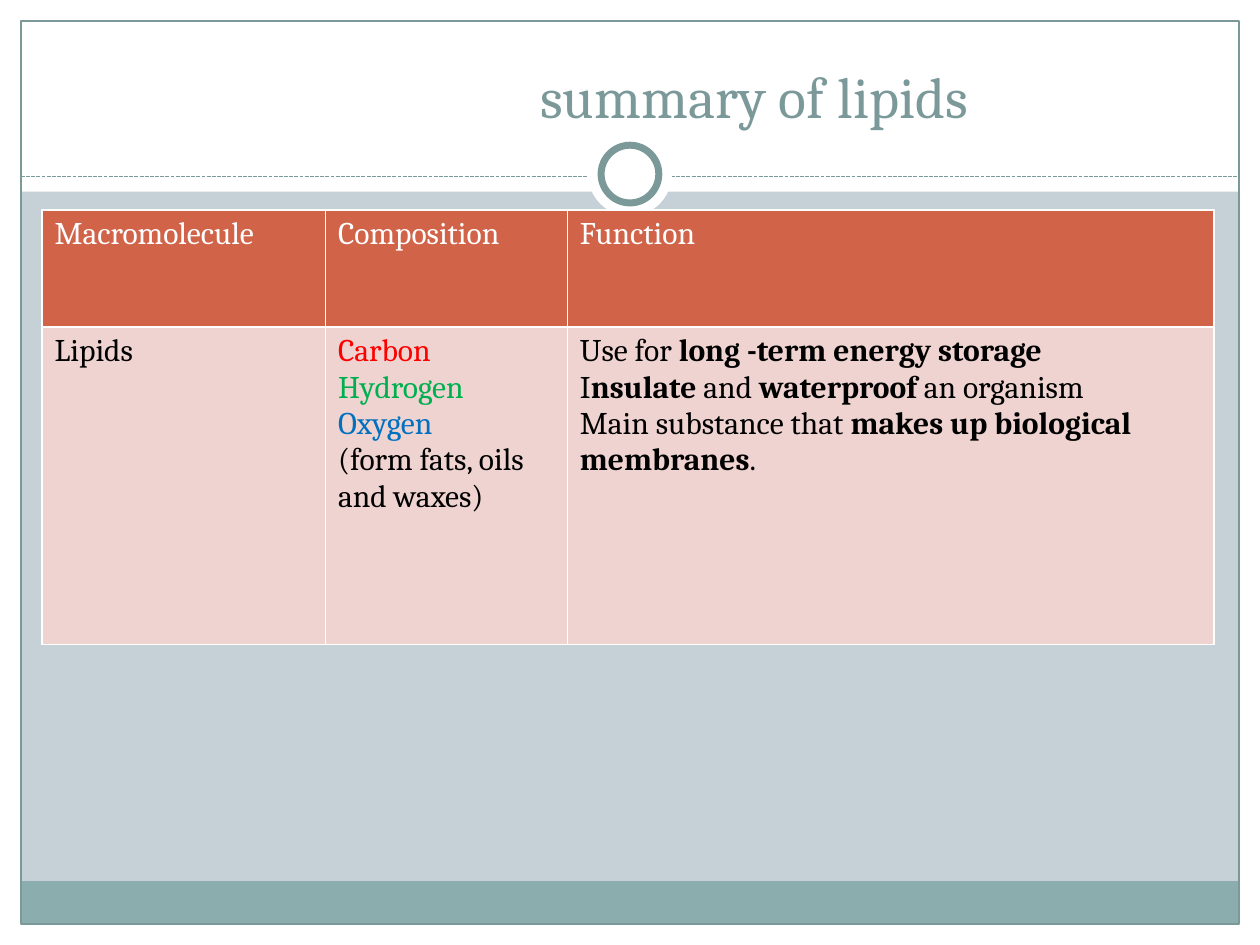
from lxml.etree import SubElement
from pptx import Presentation
from pptx.dml.color import RGBColor
from pptx.enum.dml import MSO_LINE
from pptx.enum.shapes import MSO_CONNECTOR, MSO_SHAPE
from pptx.enum.text import MSO_ANCHOR, MSO_AUTO_SIZE, PP_ALIGN
from pptx.oxml import parse_xml
from pptx.oxml.ns import nsdecls, qn
from pptx.util import Pt

THEME = dict(
    font="Cambria", title_size=33, table_size=18,
    background="C5D1D7", white="FFFFFF", band="8CADAE", accent="7C999A",
    header="D16349", body="EED3D0", black="000000",
    red="FF0000", green="00B050", blue="0070C0",
)


def color(name):
    return RGBColor.from_string(THEME[name])


def add_run(p, text, size, color_name, bold=False):
    r = p.add_run()
    r.text = text
    font_values = dict(name=THEME["font"], size=Pt(THEME[size]), bold=bold)
    for key, value in font_values.items():
        setattr(r.font, key, value)
    r.font.color.rgb = color(color_name)


prs = Presentation()
prs.slide_width, prs.slide_height = Pt(720), Pt(540)
s = prs.slides.add_slide(prs.slide_layouts[5])
s.background.fill.solid()
s.background.fill.fore_color.rgb = color("background")

# Frame: white margins, footer band and outline, then the divider and its ring
RECT, OVAL = MSO_SHAPE.RECTANGLE, MSO_SHAPE.OVAL
frame_shapes = [  # preset, left, top, width, height, fill, line width
    (RECT, 0, 528, 720, 12, "white", 0),
    (RECT, 0, 0, 720, 109.5, "white", 0),
    (RECT, 0, 0, 12, 540, "white", 0),
    (RECT, 708, 0, 12, 540, "white", 0),
    (RECT, 12, 503.5, 696, 24.5, "band", 0),
    (RECT, 12, 12, 696, 516, None, 0.75),
    (OVAL, 336, 75.5, 48, 48, "white", 0),
    (OVAL, 343.5, 83, 33, 33, "white", 4),
]
for preset, left, top, width, height, fill, line_width in frame_shapes:
    if preset == OVAL and not line_width:
        divider = s.shapes.add_connector(
            MSO_CONNECTOR.STRAIGHT, Pt(12), Pt(100.8), Pt(708), Pt(100.8))
        divider.line.color.rgb = color("accent")
        divider.line.width = Pt(0.75)
        divider.line.dash_style = MSO_LINE.SQUARE_DOT
        SubElement(divider.element.spPr, qn("a:effectLst"))
    sp = s.shapes.add_shape(preset, Pt(left), Pt(top), Pt(width), Pt(height))
    sp.shadow.inherit = False
    if fill:
        sp.fill.solid()
        sp.fill.fore_color.rgb = color(fill)
    else:
        sp.fill.background()
    if line_width:
        sp.line.color.rgb = color("accent")
        sp.line.width = Pt(line_width)
    else:
        sp.line.fill.background()

# Title, in front of the frame; the wide left inset shifts it right of centre
title = s.shapes.title
s.shapes.element.append(title.element)
title_box = dict(left=Pt(24), top=Pt(18), width=Pt(670), height=Pt(60))
for key, value in title_box.items():
    setattr(title, key, value)
tf = title.text_frame
title_format = dict(
    auto_size=MSO_AUTO_SIZE.NONE, word_wrap=True, margin_left=Pt(151),
    vertical_anchor=MSO_ANCHOR.BOTTOM)
for key, value in title_format.items():
    setattr(tf, key, value)
tf.paragraphs[0].alignment = PP_ALIGN.CENTER
add_run(tf.paragraphs[0], "summary of lipids", "title_size", "accent")

# Each cell is a list of paragraphs: a colour, then runs alternating plain and bold
rows = [
    [[("white", name)] for name in ("Macromolecule", "Composition", "Function")],
    [
        [("black", "Lipids")],
        [("red", "Carbon"), ("green", "Hydrogen"), ("blue", "Oxygen"),
         ("black", "(form fats, oils and waxes)")],
        [("black", "Use for ", "long -term energy storage"),
         ("black", "I", "nsulate", " and ", "waterproof ", "an organism"),
         ("black", "Main substance that ", "makes up biological membranes", ".")],
    ],
]
column_widths, row_heights = [162, 138.2, 369.4], [67, 181.4]
table = s.shapes.add_table(
    2, 3, Pt(24), Pt(120), Pt(sum(column_widths)), Pt(sum(row_heights))).table
table.first_row = table.horz_banding = False
for column, width in zip(table.columns, column_widths):
    column.width = Pt(width)
for row, height in zip(table.rows, row_heights):
    row.height = Pt(height)

for i, (row, fill) in enumerate(zip(rows, ("header", "body"))):
    for j, paragraphs in enumerate(row):
        cell = table.cell(i, j)
        cell.fill.solid()
        cell.fill.fore_color.rgb = color(fill)
        tcPr = cell.fill._xPr
        for position, side in enumerate("LRTB"):
            tcPr.insert(position, parse_xml(
                f'<a:ln{side} {nsdecls("a")} w="{Pt(1)}"><a:solidFill>'
                f'<a:srgbClr val="{THEME["white"]}"/></a:solidFill></a:ln{side}>'))
        tf = cell.text_frame
        for k, (text_color, *runs) in enumerate(paragraphs):
            p = tf.add_paragraph() if k else tf.paragraphs[0]
            for n, text in enumerate(runs):
                add_run(p, text, "table_size", text_color, bold=n % 2 == 1)

prs.save("out.pptx")
